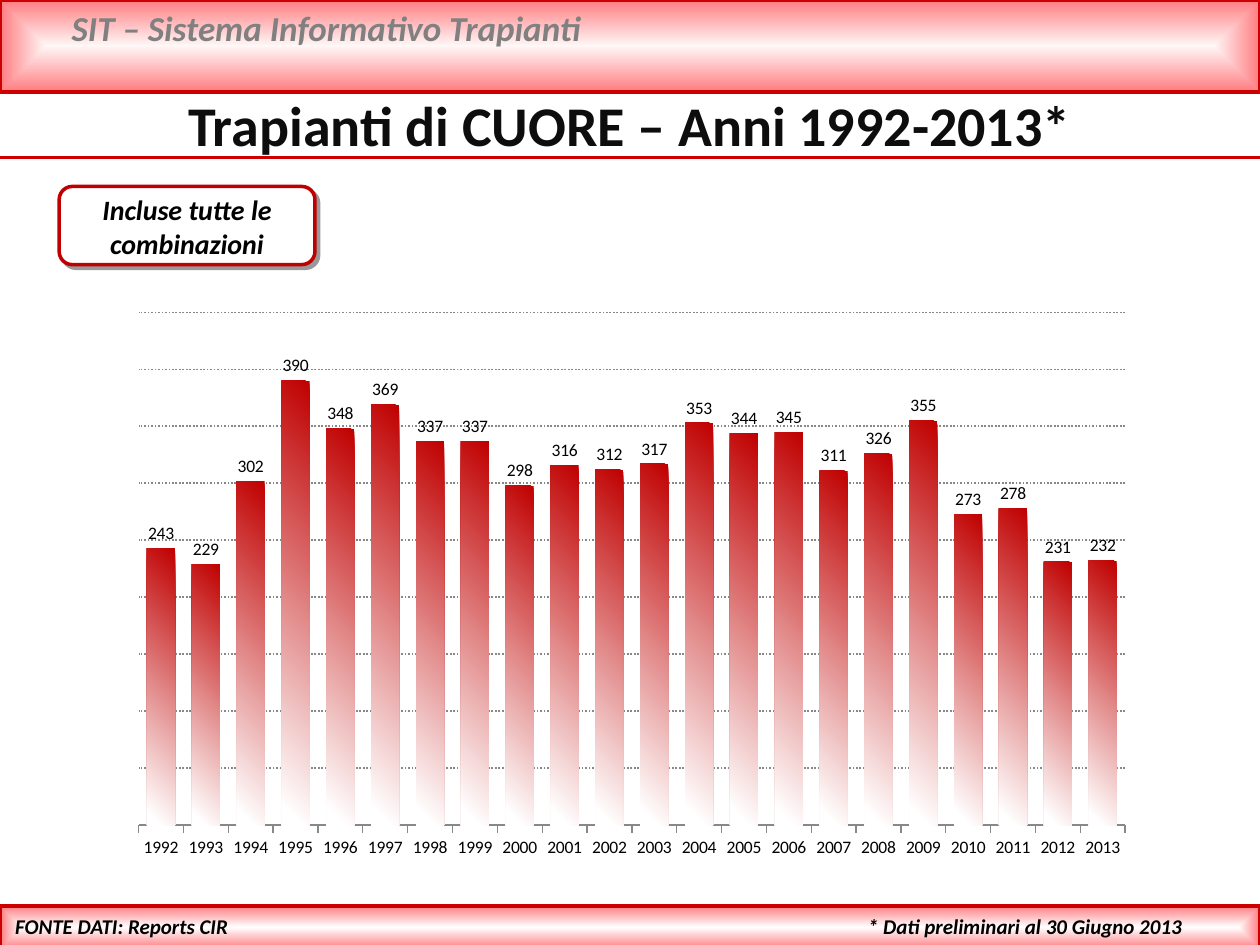
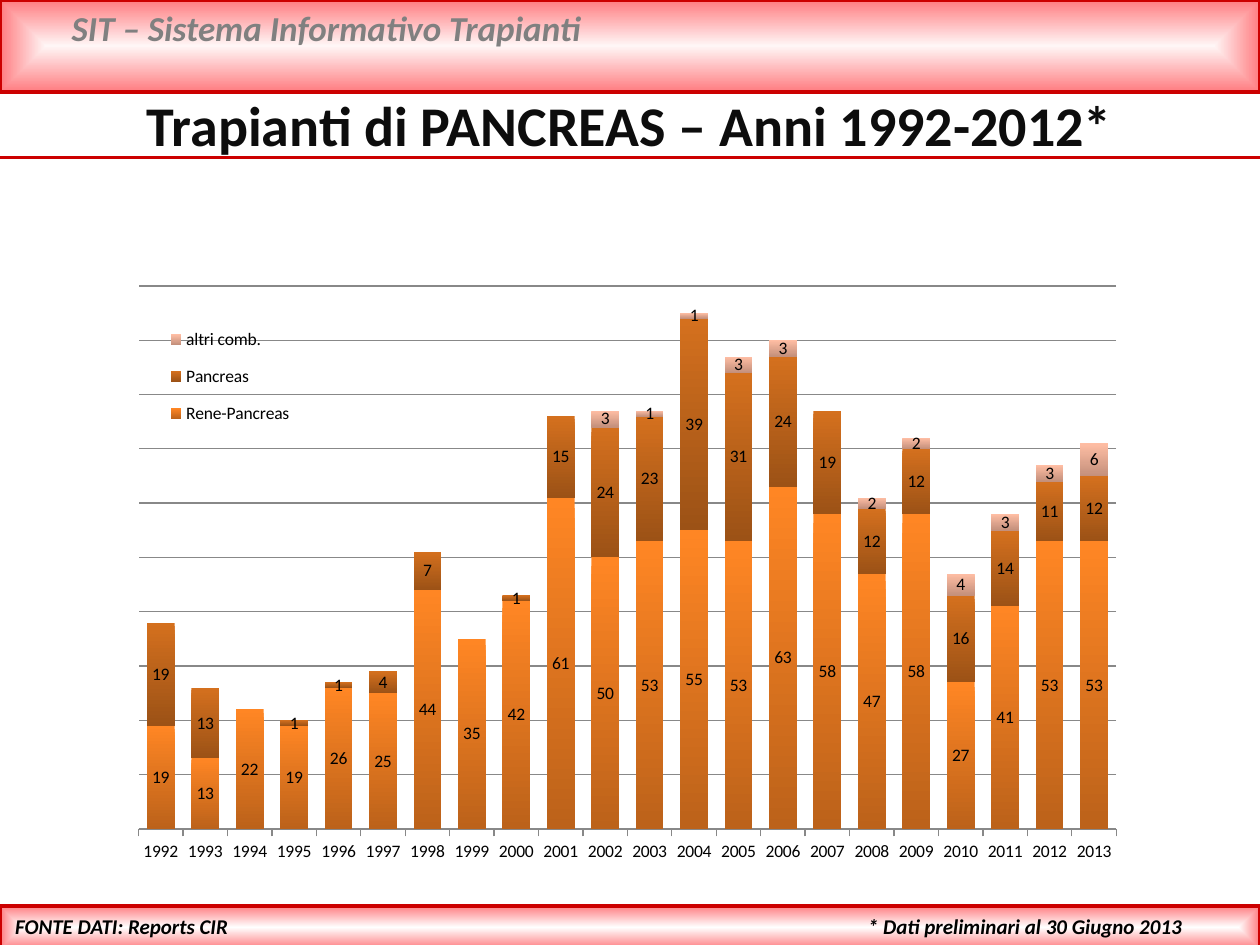
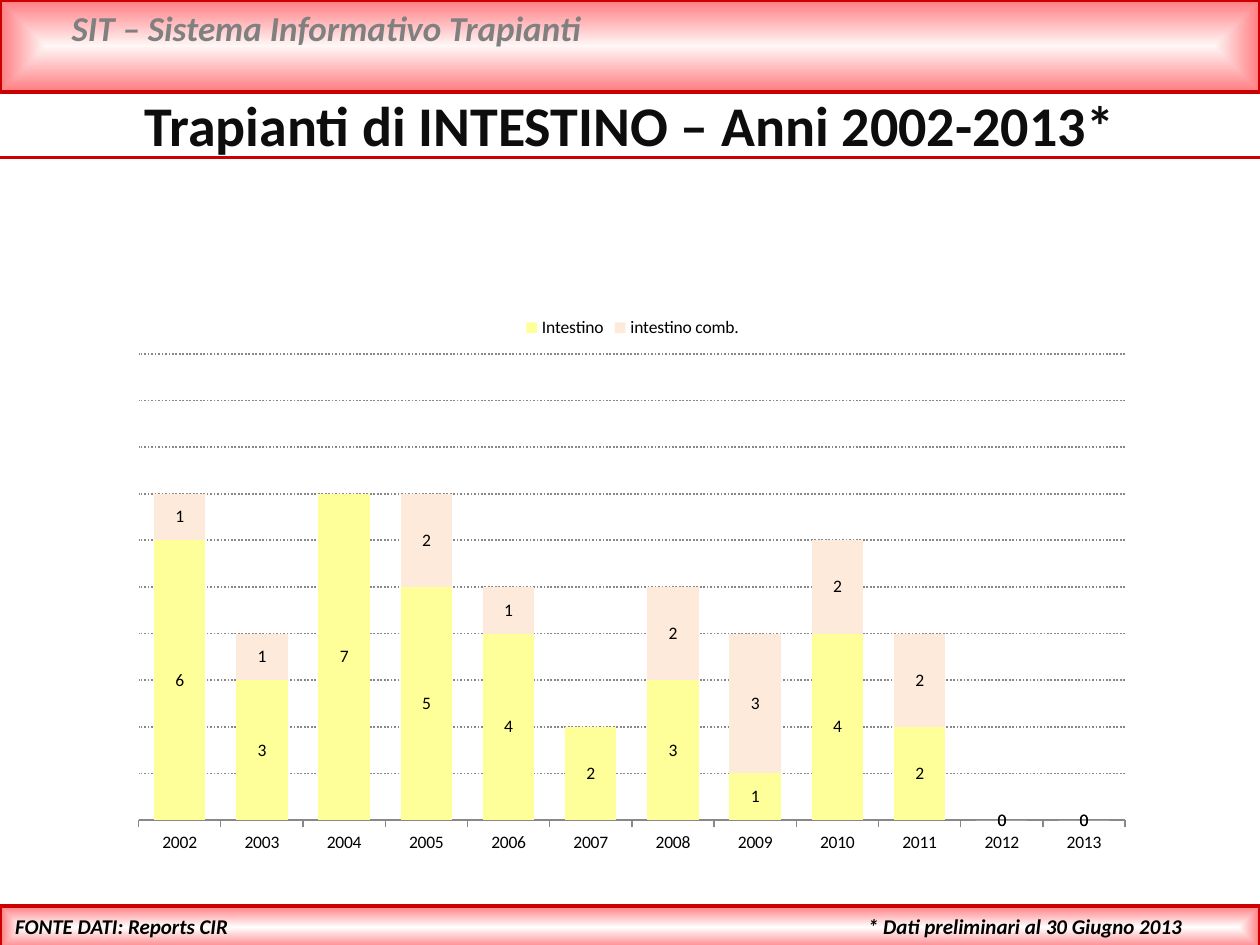
from dataclasses import dataclass
from typing import Optional

from lxml import etree
from pptx import Presentation
from pptx.chart.data import CategoryChartData
from pptx.dml.color import RGBColor
from pptx.enum.chart import XL_CHART_TYPE, XL_LABEL_POSITION, XL_LEGEND_POSITION, XL_TICK_MARK
from pptx.enum.dml import MSO_LINE
from pptx.enum.shapes import MSO_CONNECTOR, MSO_SHAPE
from pptx.enum.text import MSO_AUTO_SIZE, PP_ALIGN
from pptx.oxml.ns import qn
from pptx.util import Inches, Pt

# Colours and fonts
BLACK = RGBColor(0x00, 0x00, 0x00)
WHITE = RGBColor(0xFF, 0xFF, 0xFF)
INK = RGBColor(0x0D, 0x0D, 0x0D)
GREY = RGBColor(0x80, 0x80, 0x80)
GRID_GREY = RGBColor(0x88, 0x88, 0x88)
RULE_RED = RGBColor(0xCC, 0x00, 0x00)
DARK_RED = RGBColor(0xC0, 0x00, 0x00)
BAND_PINK = RGBColor(0xFF, 0x7C, 0x80)
PALE_PINK = RGBColor(0xFF, 0xF6, 0xF6)
ORANGE = RGBColor(0xFF, 0x86, 0x24)
ORANGE_DEEP = RGBColor(0xBC, 0x62, 0x1A)
BROWN = RGBColor(0xD4, 0x70, 0x1E)
BROWN_DEEP = RGBColor(0x9C, 0x52, 0x16)
PEACH = RGBColor(0xFF, 0xBE, 0xA4)
PEACH_DEEP = RGBColor(0xC4, 0x90, 0x7C)
YELLOW = RGBColor(0xFF, 0xFF, 0x99)
CREAM = RGBColor(0xFD, 0xEA, 0xDA)

FONT = "Calibri"
HEADER_FONT = {"size": Pt(20), "bold": True, "italic": True}
TITLE_FONT = {"size": Pt(32), "bold": True}
CALLOUT_FONT = {"size": Pt(16), "bold": True, "italic": True}
FOOTER_FONT = {"size": Pt(12), "bold": True, "italic": True}
CHART_FONT = {"size": Pt(10)}
LAST_YEAR = 2013


@dataclass(frozen=True)
class Box:
    left: float
    top: float
    width: float
    height: float

    def emu(self) -> list:
        return [Inches(v) for v in (self.left, self.top, self.width, self.height)]

    def within(self, outer: "Box") -> dict[str, float]:
        """Place of this box as fractions of the outer one."""
        return {
            "x": (self.left - outer.left) / outer.width,
            "y": (self.top - outer.top) / outer.height,
            "w": self.width / outer.width,
            "h": self.height / outer.height,
        }


@dataclass(frozen=True)
class Label:
    text: str
    box: Box
    font: dict
    color: RGBColor = BLACK
    align: PP_ALIGN = PP_ALIGN.LEFT
    wrap: bool = True


@dataclass(frozen=True)
class Gradient:
    start: RGBColor
    end: RGBColor
    end_at: float = 1.0
    angle: float = 270


@dataclass(frozen=True)
class Series:
    name: str
    values: list
    paint: Gradient | RGBColor


@dataclass(frozen=True)
class OrganSlide:
    title: str
    first_year: int
    series: list[Series]
    chart: Box
    plot: Box
    top_value: int
    step: int
    stacked: bool = True
    dotted_grid: bool = True
    legend_position: Optional[XL_LEGEND_POSITION] = None
    legend: Optional[Box] = None
    callout: str = ""


# Parts that every slide shares
BANDS = [
    (Box(0, 0, 10, 0.73), Gradient(PALE_PINK, BAND_PINK)),
    (Box(0, 7.19, 10, 0.34), Gradient(WHITE, BAND_PINK)),
]
SHARED_LABELS = [
    Label("SIT – Sistema Informativo Trapianti", Box(0.47, 0, 8.98, 0.44), HEADER_FONT, GREY),
    Label("* Dati preliminari al 30 Giugno 2013", Box(6.79, 7.2, 3.21, 0.3), FOOTER_FONT),
    Label("FONTE DATI: Reports CIR", Box(-0.04, 7.2, 1.95, 0.3), FOOTER_FONT,
          align=PP_ALIGN.RIGHT, wrap=False),
]
TITLE_BOX = Box(0, 0.67, 10, 0.64)
CALLOUT_BOX = Box(0.47, 1.48, 2.03, 0.62)

SLIDES = [
    OrganSlide(
        "Trapianti di CUORE – Anni 1992-2013*", 1992,
        [Series("Series 1",
                [243, 229, 302, 390, 348, 369, 337, 337, 298, 316, 312,
                 317, 353, 344, 345, 311, 326, 355, 273, 278, 231, 232],
                Gradient(DARK_RED, WHITE, 0.96, 225))],
        Box(0.94, 2.4, 8.16, 4.5), Box(1.1, 2.48, 7.83, 4.07), 450, 50,
        stacked=False, callout="Incluse tutte le combinazioni",
    ),
    OrganSlide(
        "Trapianti di PANCREAS – Anni 1992-2012*", 1992,
        [Series("Rene-Pancreas",
                [19, 13, 22, 19, 26, 25, 44, 35, 42, 61, 50,
                 53, 55, 53, 63, 58, 47, 58, 27, 41, 53, 53],
                Gradient(ORANGE, ORANGE_DEEP)),
         Series("Pancreas",
                [19, 13, None, 1, 1, 4, 7, None, 1, 15, 24,
                 23, 39, 31, 24, 19, 12, 12, 16, 14, 11, 12],
                Gradient(BROWN, BROWN_DEEP)),
         Series("altri comb.",
                [None] * 10 + [3, 1, 1, 3, 3, None, 2, 2, 4, 3, 3, 6],
                Gradient(PEACH, PEACH_DEEP))],
        Box(0.94, 2.18, 8.08, 4.76), Box(1.1, 2.27, 7.76, 4.31), 100, 10,
        dotted_grid=False, legend_position=XL_LEGEND_POSITION.LEFT,
        legend=Box(1.25, 2.48, 1.15, 1.02),
    ),
    OrganSlide(
        "Trapianti di INTESTINO – Anni 2002-2013*", 2002,
        [Series("Intestino", [6, 3, 7, 5, 4, 2, 3, 1, 4, 2, 0, 0], YELLOW),
         Series("intestino comb.", [1, 1, None, 2, 1, None, 2, 3, 2, 2, 0, 0], CREAM)],
        Box(0.94, 2.41, 8.16, 4.44), Box(1.1, 2.81, 7.83, 3.7), 10, 1,
        legend_position=XL_LEGEND_POSITION.TOP,
    ),
]


def style_font(font, values: dict, color: RGBColor) -> None:
    for name, value in {"name": FONT, **values}.items():
        setattr(font, name, value)
    font.color.rgb = color


def style_line(line, color: RGBColor, width: float) -> None:
    line.color.rgb = color
    line.width = Pt(width)


def paint_fill(fill, paint: Gradient | RGBColor) -> None:
    if isinstance(paint, RGBColor):
        fill.solid()
        fill.fore_color.rgb = paint
        return
    fill.gradient()
    fill.gradient_angle = paint.angle
    stops = zip(fill.gradient_stops, (paint.start, paint.end), (0, paint.end_at))
    for stop, color, position in stops:
        stop.color.rgb = color
        stop.position = position


def add_label(slide, label: Label) -> None:
    frame = slide.shapes.add_textbox(*label.box.emu()).text_frame
    frame.word_wrap = label.wrap
    frame.auto_size = MSO_AUTO_SIZE.SHAPE_TO_FIT_TEXT
    paragraph = frame.paragraphs[0]
    paragraph.text = label.text
    paragraph.alignment = label.align
    style_font(paragraph.runs[0].font, label.font, label.color)


def add_panel(slide, kind: MSO_SHAPE, box: Box, paint: Gradient | RGBColor, border: RGBColor):
    panel = slide.shapes.add_shape(kind, *box.emu())
    panel.shadow.inherit = False
    paint_fill(panel.fill, paint)
    style_line(panel.line, border, 2)
    return panel


def add_band(slide, box: Box, paint: Gradient) -> None:
    band = add_panel(slide, MSO_SHAPE.RECTANGLE, box, paint, RULE_RED)
    # The gradient runs from the centre out to the edges
    linear = next(band.element.iter(qn("a:lin")))
    outward = etree.Element(qn("a:path"), {"path": "shape"})
    etree.SubElement(outward, qn("a:fillToRect"), dict.fromkeys("ltrb", "50000"))
    linear.getparent().replace(linear, outward)


def add_title_rule(slide) -> None:
    rule = slide.shapes.add_connector(
        MSO_CONNECTOR.STRAIGHT, Inches(0), Inches(1.25), Inches(10), Inches(1.25))
    style_line(rule.line, RULE_RED, 2)
    etree.SubElement(rule.element.spPr, qn("a:effectLst"))


def add_callout(slide, text: str) -> None:
    panel = add_panel(slide, MSO_SHAPE.ROUNDED_RECTANGLE, CALLOUT_BOX, WHITE, DARK_RED)
    effects = next(panel.element.iter(qn("a:effectLst")))
    shadow = etree.SubElement(effects, qn("a:outerShdw"), {
        "blurRad": "0", "dist": str(Pt(3)), "dir": "2700000", "algn": "tl", "rotWithShape": "0"})
    color = etree.SubElement(shadow, qn("a:srgbClr"), {"val": str(BLACK)})
    etree.SubElement(color, qn("a:alpha"), {"val": "40000"})
    add_label(slide, Label(text, CALLOUT_BOX, CALLOUT_FONT, align=PP_ALIGN.CENTER))


def set_layout(parent, index: int, place: dict[str, float], inner: bool) -> None:
    """Fix a chart element at a place given in fractions of the chart."""
    for old in parent.findall(qn("c:layout")):
        parent.remove(old)
    layout = etree.Element(qn("c:layout"))
    manual = etree.SubElement(layout, qn("c:manualLayout"))
    entries = {"layoutTarget": "inner"} if inner else {}
    entries |= {"xMode": "edge", "yMode": "edge"}
    entries |= {key: f"{value:.4f}" for key, value in place.items()}
    for tag, value in entries.items():
        etree.SubElement(manual, qn(f"c:{tag}"), {"val": value})
    parent.insert(index, layout)


def add_organ_chart(slide, organ: OrganSlide) -> None:
    data = CategoryChartData()
    data.categories = [str(year) for year in range(organ.first_year, LAST_YEAR + 1)]
    for series in organ.series:
        data.add_series(series.name, series.values)
    kind = XL_CHART_TYPE.COLUMN_STACKED if organ.stacked else XL_CHART_TYPE.COLUMN_CLUSTERED
    chart = slide.shapes.add_chart(kind, *organ.chart.emu(), data).chart
    chart.has_title = False
    style_font(chart.font, CHART_FONT, BLACK)

    # Columns and their values
    plot = chart.plots[0]
    plot.vary_by_categories = False
    plot.gap_width = 60
    plot.overlap = 100 if organ.stacked else -20
    plot.has_data_labels = True
    labels = plot.data_labels
    labels.show_value = True
    labels.position = XL_LABEL_POSITION.CENTER if organ.stacked else XL_LABEL_POSITION.OUTSIDE_END
    style_font(labels.font, CHART_FONT, BLACK)
    for columns, series in zip(plot.series, organ.series):
        columns.invert_if_negative = False
        paint_fill(columns.format.fill, series.paint)

    # Axes and grid
    years, counts = chart.category_axis, chart.value_axis
    years.major_tick_mark = XL_TICK_MARK.OUTSIDE
    style_line(years.format.line, GRID_GREY, 0.75)
    scale = {"visible": False, "minimum_scale": 0, "maximum_scale": organ.top_value,
             "major_unit": organ.step, "has_major_gridlines": True}
    for name, value in scale.items():
        setattr(counts, name, value)
    grid = counts.major_gridlines.format.line
    style_line(grid, GRID_GREY, 1 if organ.dotted_grid else 0.75)
    if organ.dotted_grid:
        grid.dash_style = MSO_LINE.ROUND_DOT

    # Legend and plot area
    plot_area = next(chart.element.iter(qn("c:plotArea")))
    set_layout(plot_area, 0, organ.plot.within(organ.chart), inner=True)
    chart.has_legend = organ.legend_position is not None
    if chart.has_legend:
        chart.legend.position = organ.legend_position
        chart.legend.include_in_layout = organ.legend is not None
        style_font(chart.legend.font, CHART_FONT, BLACK)
    if organ.legend:
        legend = next(chart.element.iter(qn("c:legend")))
        set_layout(legend, 1, organ.legend.within(organ.chart), inner=False)


def add_organ_slide(deck, organ: OrganSlide) -> None:
    slide = deck.slides.add_slide(deck.slide_layouts[6])
    for box, paint in BANDS:
        add_band(slide, box, paint)
    add_title_rule(slide)
    for label in SHARED_LABELS:
        add_label(slide, label)
    add_label(slide, Label(organ.title, TITLE_BOX, TITLE_FONT, INK, PP_ALIGN.CENTER))
    if organ.callout:
        add_callout(slide, organ.callout)
    add_organ_chart(slide, organ)


def main() -> None:
    deck = Presentation()
    deck.slide_width, deck.slide_height = Inches(10), Inches(7.5)
    for organ in SLIDES:
        add_organ_slide(deck, organ)
    deck.save("out.pptx")


if __name__ == "__main__":
    main()
